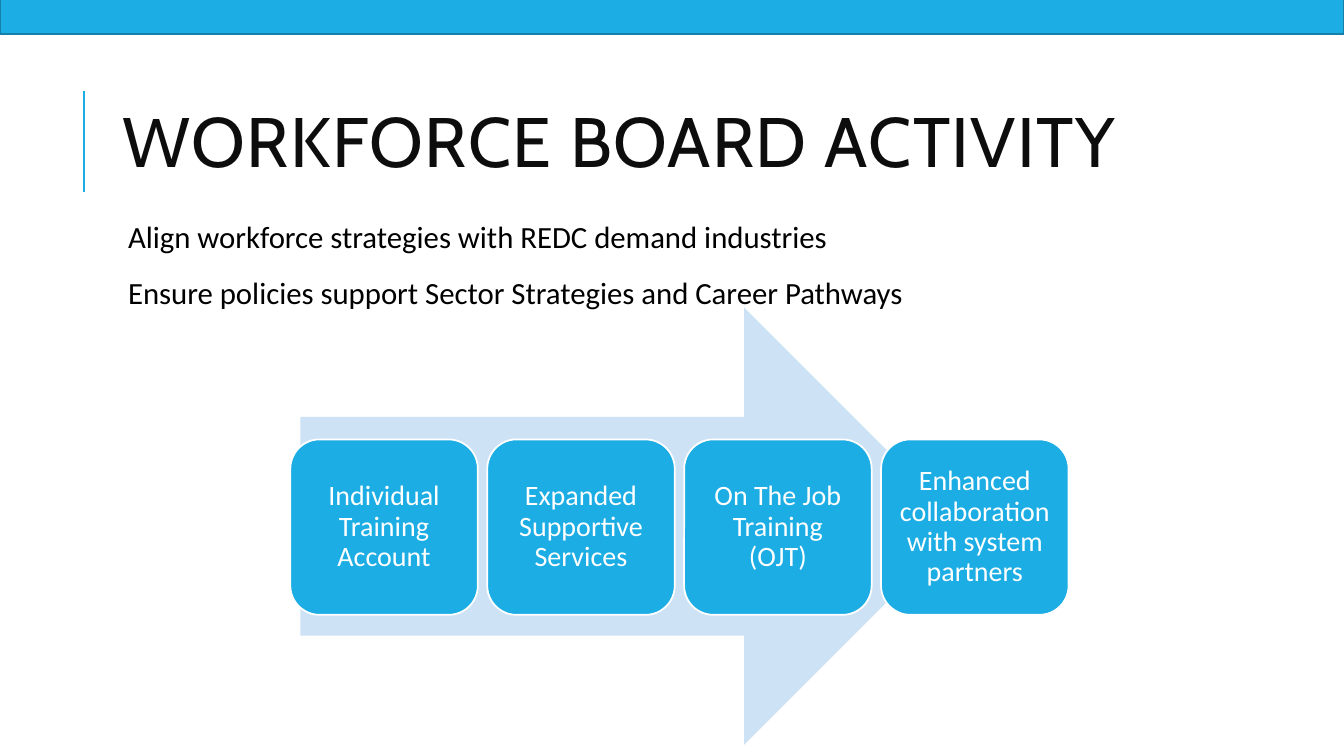
from dataclasses import dataclass

from lxml import etree
from pptx import Presentation
from pptx.dml.color import RGBColor
from pptx.enum.shapes import MSO_CONNECTOR, MSO_SHAPE
from pptx.enum.text import MSO_ANCHOR, PP_ALIGN
from pptx.oxml.ns import qn
from pptx.util import Inches, Pt


@dataclass(frozen=True)
class Theme:
    accent: RGBColor = RGBColor.from_string("1CADE4")
    accent_dark: RGBColor = RGBColor.from_string("1580A9")
    arrow: RGBColor = RGBColor.from_string("CDE3F5")
    white: RGBColor = RGBColor.from_string("FFFFFF")
    title: RGBColor = RGBColor.from_string("0D0D0D")
    body: RGBColor = RGBColor.from_string("000000")
    title_font: str = "Cabin"
    body_font: str = "Calibri"
    title_size: int = 50
    body_size: int = 22
    step_size: int = 20


theme = Theme()


def add_filled_shape(kind, left, top, width, height, fill, line=None):
    shape = page.shapes.add_shape(
        kind, Inches(left), Inches(top), Inches(width), Inches(height)
    )
    shape.shadow.inherit = False
    shape.fill.solid()
    shape.fill.fore_color.rgb = fill
    if line is None:
        shape.line.fill.background()
    else:
        shape.line.color.rgb = line
        shape.line.width = Pt(1.25)
    return shape


def add_span(para, text, font, size, color):
    span = para.add_run()
    span.text = text
    span.font.name = font
    span.font.size = Pt(size)
    span.font.color.rgb = color
    return span


deck = Presentation()
deck.slide_width = Inches(13.33)
deck.slide_height = Inches(7.5)
page = deck.slides.add_slide(deck.slide_layouts[6])

title_rule = page.shapes.add_connector(
    MSO_CONNECTOR.STRAIGHT, Inches(0.83), Inches(1.9), Inches(0.83), Inches(0.9)
)
title_rule.line.color.rgb = theme.accent
title_rule.line.width = Pt(1.5)
etree.SubElement(title_rule._element.spPr, qn("a:effectLst"))

add_filled_shape(
    MSO_SHAPE.RECTANGLE, 0, -0.21, 13.33, 0.55, theme.accent, theme.accent_dark
)

title_box = page.shapes.add_textbox(
    Inches(1.12), Inches(0.64), Inches(10.63), Inches(1.64)
)
title_frame = title_box.text_frame
title_frame.word_wrap = True
title_frame.vertical_anchor = MSO_ANCHOR.MIDDLE
title_para = title_frame.paragraphs[0]
title_para.line_spacing = 0.8
title_span = add_span(
    title_para, "WORKFORCE BOARD ACTIVITY",
    theme.title_font, theme.title_size, theme.title,
)
title_span.font._element.set("spc", "100")

add_filled_shape(MSO_SHAPE.RIGHT_ARROW, 2.98, 3.05, 6.57, 4.34, theme.arrow)

steps = [
    "Individual Training Account",
    "Expanded Supportive Services",
    "On The Job Training (OJT)",
    "Enhanced collaboration with system partners",
]
step_left, step_pitch = 2.88, 1.953
for index, step in enumerate(steps):
    box = add_filled_shape(
        MSO_SHAPE.ROUNDED_RECTANGLE, step_left + index * step_pitch, 4.36,
        1.86, 1.74, theme.accent, theme.white,
    )
    frame = box.text_frame
    frame.word_wrap = True
    frame.vertical_anchor = MSO_ANCHOR.MIDDLE
    frame.margin_left = frame.margin_right = Inches(0.08)
    frame.margin_top = frame.margin_bottom = Inches(0.08)
    para = frame.paragraphs[0]
    para.alignment = PP_ALIGN.CENTER
    para.line_spacing = 0.9
    add_span(para, step, theme.body_font, theme.step_size, theme.white)

goals = [
    "Align workforce strategies with REDC demand industries",
    "Ensure policies support Sector Strategies and Career Pathways",
]
goals_box = page.shapes.add_textbox(
    Inches(1.12), Inches(2.11), Inches(10.63), Inches(4.4)
)
goals_frame = goals_box.text_frame
goals_frame.word_wrap = True
goals_frame.margin_left = Inches(0.15)
goals_frame.margin_top = goals_frame.margin_right = Inches(0.05)
goals_frame.margin_bottom = Inches(0.05)
for index, goal in enumerate(goals):
    para = goals_frame.add_paragraph() if index else goals_frame.paragraphs[0]
    if index:
        para.space_before = Pt(12)
    para.space_after = Pt(2)
    add_span(para, goal, theme.body_font, theme.body_size, theme.body)

deck.save("out.pptx")
